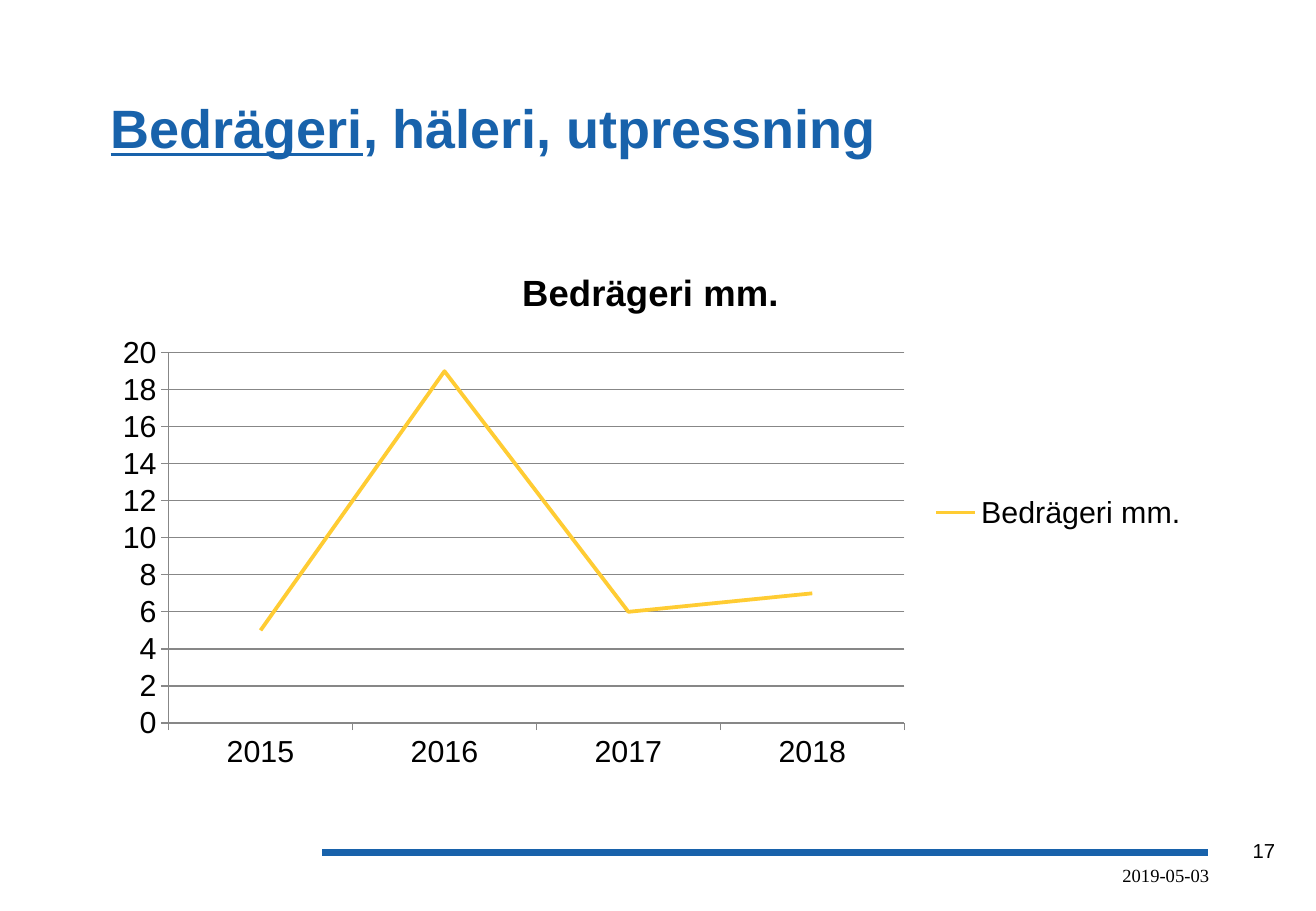
from lxml import etree
from pptx import Presentation
from pptx.chart.data import CategoryChartData
from pptx.dml.color import RGBColor
from pptx.enum.chart import XL_CHART_TYPE, XL_LEGEND_POSITION, XL_MARKER_STYLE, XL_TICK_MARK
from pptx.enum.shapes import MSO_CONNECTOR
from pptx.enum.text import MSO_ANCHOR, PP_ALIGN
from pptx.oxml.ns import qn
from pptx.util import Inches, Pt

LINE_CHART = XL_CHART_TYPE.LINE
LEGEND_RIGHT = XL_LEGEND_POSITION.RIGHT
NO_MARKER = XL_MARKER_STYLE.NONE
TICK_OUTSIDE = XL_TICK_MARK.OUTSIDE
STRAIGHT = MSO_CONNECTOR.STRAIGHT
TOP, MIDDLE = MSO_ANCHOR.TOP, MSO_ANCHOR.MIDDLE
LEFT, RIGHT = PP_ALIGN.LEFT, PP_ALIGN.RIGHT

COLORS = {"blue": "1862AB", "black": "000000", "yellow": "FFCC33", "grey": "878787"}
SERIES_NAME = "Bedrägeri mm."
CASES = {"2015": 5, "2016": 19, "2017": 6, "2018": 7}


def color(name):
    """Return the named colour."""
    return RGBColor.from_string(COLORS[name])


def style_font(font, size, color_name, bold=False, face="Arial"):
    """Set the face, size, colour and weight of a font."""
    font.name = face
    font.size = Pt(size)
    font.bold = bold
    font.color.rgb = color(color_name)


def style_line(line, color_name, width):
    """Set the colour and width in points of a line."""
    line.color.rgb = color(color_name)
    line.width = Pt(width)


def add_text(page, place, spans, size, color_name, bold=False, face="Arial",
             align=LEFT, anchor=TOP, side_insets=(0.1, 0.1)):
    """Add a one-paragraph text box and return its runs."""
    frame = page.shapes.add_textbox(*map(Inches, place)).text_frame
    frame.word_wrap = True
    frame.vertical_anchor = anchor
    frame.margin_left, frame.margin_right = map(Inches, side_insets)
    para = frame.paragraphs[0]
    para.alignment = align
    for text in spans:
        span = para.add_run()
        span.text = text
        style_font(span.font, size, color_name, bold, face)
    return para.runs


def add_rule(page, left, right, top):
    """Add the horizontal footer rule."""
    rule = page.shapes.add_connector(
        STRAIGHT, Inches(left), Inches(top), Inches(right), Inches(top))
    style_line(rule.line, "blue", 4.5)
    etree.SubElement(rule._element.spPr, qn("a:effectLst"))


def add_line_chart(page, place):
    """Add the line chart of cases per year."""
    data = CategoryChartData()
    data.categories = list(CASES)
    data.add_series(SERIES_NAME, list(CASES.values()))
    chart = page.shapes.add_chart(LINE_CHART, *map(Inches, place), data).chart
    style_font(chart.font, 18, "black")

    chart.has_title = True
    title = chart.chart_title.text_frame
    title.text = SERIES_NAME
    style_font(title.paragraphs[0].runs[0].font, 21.6, "black", bold=True)

    chart.has_legend = True
    chart.legend.position = LEGEND_RIGHT
    chart.legend.include_in_layout = False

    for axis in (chart.category_axis, chart.value_axis):
        axis.major_tick_mark = TICK_OUTSIDE
        style_line(axis.format.line, "grey", 0.75)
    scale = chart.value_axis
    scale.minimum_scale, scale.maximum_scale, scale.major_unit = 0, 20, 2
    style_line(scale.major_gridlines.format.line, "grey", 0.75)

    chart.plots[0].vary_by_categories = False
    series = chart.plots[0].series[0]
    series.smooth = False
    series.marker.style = NO_MARKER
    style_line(series.format.line, "yellow", 2.25)


def main():
    """Build the slide and save the deck."""
    deck = Presentation()
    deck.slide_width, deck.slide_height = Inches(10.83), Inches(7.5)
    page = deck.slides.add_slide(deck.slide_layouts[6])

    add_text(page, (10.21, 6.85, 0.44, 0.3), ["17"], 12, "black")
    add_rule(page, 2.65, 9.94, 7.02)
    add_text(page, (3.38, 7.06, 6.67, 0.29), ["2019-05-03"], 11, "black",
             face="Times New Roman", align=RIGHT, side_insets=(0, 0.1))
    title_runs = add_text(page, (0.83, 0.42, 9.11, 1.25),
                          ["Bedrägeri", ", häleri, utpressning"], 32, "blue",
                          bold=True, anchor=MIDDLE, side_insets=(0.08, 0.08))
    title_runs[0].font.underline = True
    add_line_chart(page, (0.83, 2.02, 9.05, 4.4))

    deck.save("out.pptx")


if __name__ == "__main__":
    main()
